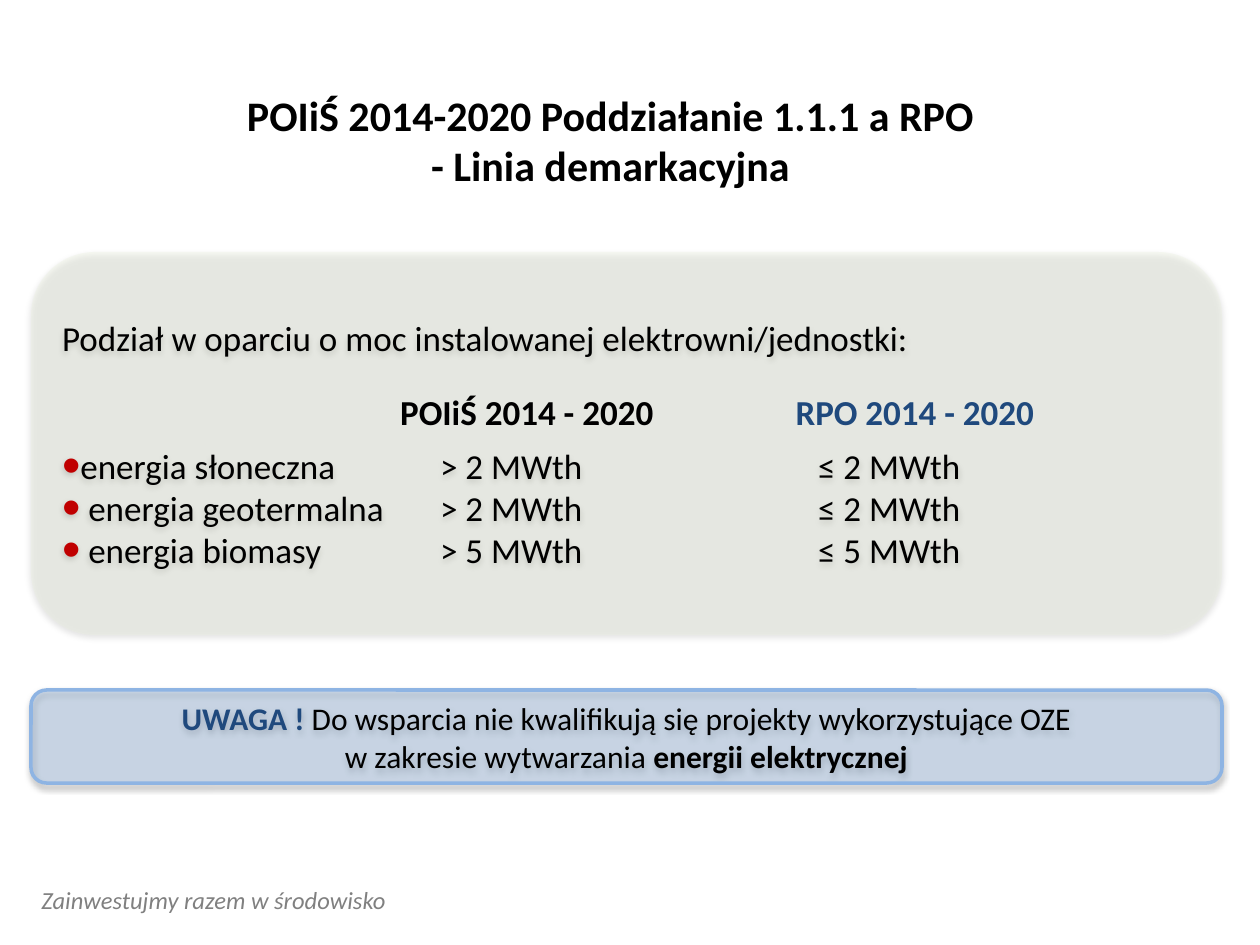
from dataclasses import dataclass
from lxml import etree
from pptx import Presentation
from pptx import util as u
from pptx.dml.color import RGBColor
from pptx.enum import shapes, text
from pptx.oxml.ns import qn

PX = 914400 / 126


@dataclass(frozen=True)
class Theme:
    font: str = "Calibri"
    ink: str = "000000"
    navy: str = "1F497D"
    grey: str = "808080"
    red: str = "C00000"
    green: str = "EBF1DE"
    blue: str = "8EB4E3"
    head: int = 24
    body: int = 20
    note: int = 18
    foot: int = 14


T = Theme()


def px(n):
    return u.Emu(round(n * PX))


def add(node, tag, **attrs):
    sub = etree.SubElement(node, qn(tag))
    for key, val in attrs.items():
        sub.set(key, str(val))
    return sub


def write(para, words, size, color=T.ink, **style):
    run = para.add_run()
    run.text = words
    look = dict(name=T.font, size=u.Pt(size), **style)
    for key, val in look.items():
        setattr(run.font, key, val)
    run.font.color.rgb = RGBColor.from_string(color)


def label(slide, box, lines, size, color=T.ink, align=text.PP_ALIGN.CENTER, **style):
    frame = slide.shapes.add_textbox(*map(px, box)).text_frame
    frame.word_wrap = True
    for i, line in enumerate(lines):
        para = frame.add_paragraph() if i else frame.paragraphs[0]
        para.alignment = align
        write(para, line, size, color, **style)


def card(slide, box, fill, line=None):
    """Rounded, see-through box with a soft shadow; returns its text frame."""
    shape = slide.shapes.add_shape(
        shapes.MSO_SHAPE.ROUNDED_RECTANGLE, *map(px, box))
    shape.fill.solid()
    shape.fill.fore_color.rgb = RGBColor.from_string(fill)
    props = shape.fill._xPr
    add(props.find(".//" + qn("a:srgbClr")), "a:alpha", val=33000)
    if line:
        shape.line.color.rgb = RGBColor.from_string(line)
        shape.line.width = u.Pt(2)
    else:
        shape.line.fill.background()
    shape.shadow.inherit = False
    glow = add(props.find(qn("a:effectLst")), "a:outerShdw", blurRad=u.Pt(3.5),
               dist=u.Pt(2.2), dir=5400000, algn="ctr", rotWithShape=0)
    add(add(glow, "a:srgbClr", val=T.ink), "a:alpha", val=32000)
    frame = shape.text_frame
    frame.word_wrap = True
    frame.vertical_anchor = text.MSO_ANCHOR.MIDDLE
    return frame


def bullet(para, stops):
    props = para._p.get_or_add_pPr()
    props.set("marL", "0")
    props.set("indent", str(-u.Inches(0.25)))
    add(add(props, "a:buClr"), "a:srgbClr", val=T.red)
    add(props, "a:buSzPct", val=150000)
    add(props, "a:buFont", typeface="Arial")
    add(props, "a:buChar", char="•")
    tabs = add(props, "a:tabLst")
    for stop in stops:
        add(tabs, "a:tab", pos=px(stop), algn="l")


def limits(slide, box, lead, heads, rows):
    """Panel that sets the power limits of two programmes side by side."""
    x, y, w, h = box
    frame = card(slide, box, T.green)
    first = frame.paragraphs[0]
    first.alignment = text.PP_ALIGN.LEFT
    write(first, lead, T.body)
    for i, row in enumerate(rows):
        para = frame.add_paragraph()
        para.alignment = text.PP_ALIGN.LEFT
        if i == 0:
            para.space_before = u.Pt(49)
        bullet(para, (378, 756))
        write(para, "\t".join(row), T.body)
    for i, (head, color) in enumerate(heads):
        label(slide, (x + 331 + 388 * i, y + 132, 330, 55), [head], T.body,
              color, bold=True)


def notice(slide, box, lines):
    frame = card(slide, box, T.blue, T.blue)
    for i, line in enumerate(lines):
        para = frame.add_paragraph() if i else frame.paragraphs[0]
        para.alignment = text.PP_ALIGN.CENTER
        for words, color, bold in line:
            write(para, words, T.note, color, bold=bold)


def main():
    deck = Presentation()
    deck.slide_width, deck.slide_height = px(1260), px(945)
    slide = deck.slides.add_slide(deck.slide_layouts[6])
    label(slide, (29, 879, 532, 43), ["Zainwestujmy razem w środowisko"],
          T.foot, T.grey, text.PP_ALIGN.LEFT, italic=True)
    limits(slide, (31, 252, 1191, 383),
           "Podział w oparciu o moc instalowanej elektrowni/jednostki:",
           [("POIiŚ 2014 - 2020", T.ink), ("RPO 2014 - 2020", T.navy)],
           [("energia słoneczna", "> 2 MWth", "≤ 2 MWth"),
            (" energia geotermalna", "> 2 MWth", "≤ 2 MWth"),
            (" energia biomasy", "> 5 MWth", "≤ 5 MWth")])
    notice(slide, (31, 690, 1191, 93), [
        [("UWAGA !", T.navy, True),
         (" Do wsparcia nie kwalifikują się projekty wykorzystujące OZE",
          T.ink, False)],
        [("w zakresie wytwarzania ", T.ink, False),
         ("energii elektrycznej", T.ink, True)]])
    label(slide, (141, 83, 939, 115),
          ["POIiŚ 2014-2020 Poddziałanie 1.1.1 a RPO", "- Linia demarkacyjna"],
          T.head, bold=True)
    deck.save("out.pptx")


if __name__ == "__main__":
    main()
